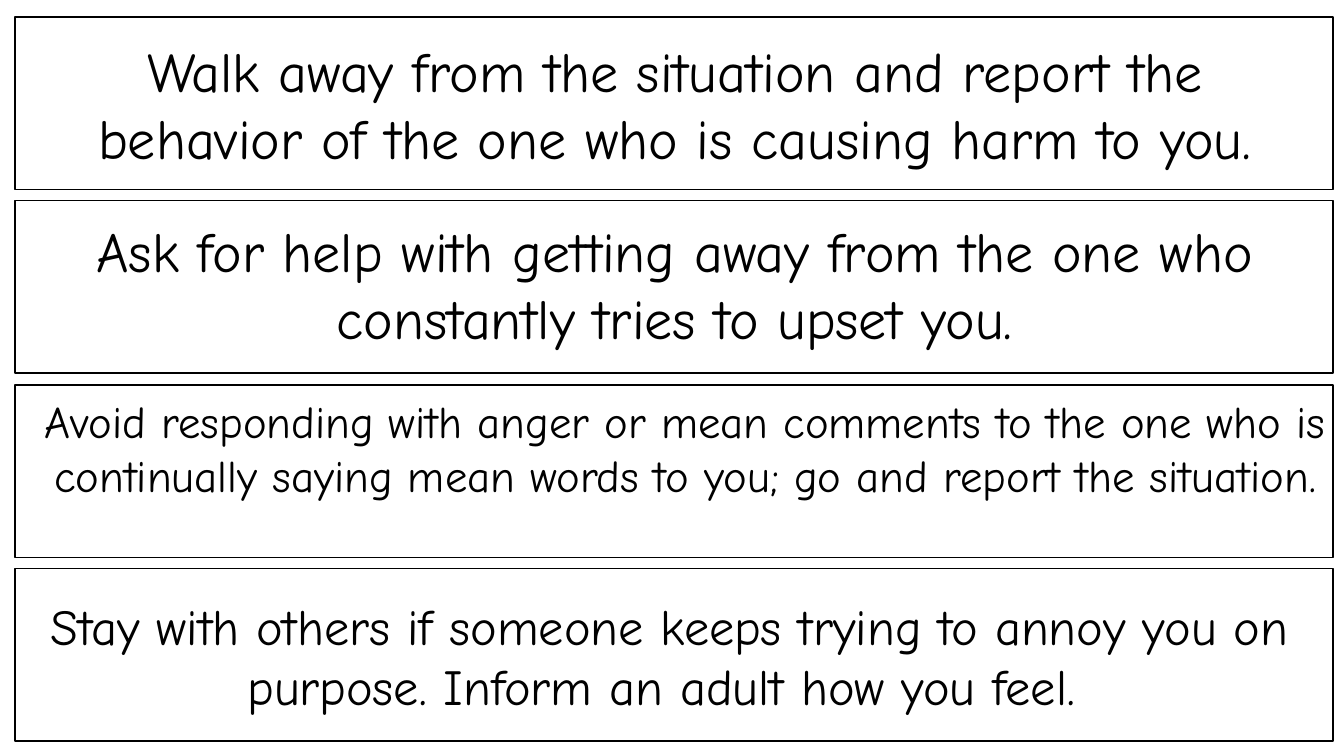
from pptx import Presentation
from pptx.dml.color import RGBColor
from pptx.enum.shapes import MSO_SHAPE
from pptx.enum.text import PP_ALIGN
from pptx.util import Inches, Pt

BLACK = RGBColor(0, 0, 0)
WHITE = RGBColor(255, 255, 255)
FONT = "Comic Neue"
TOP, STEP = 0.17, 1.824

ADVICE = [
    ("Walk away from the situation and report the behavior of the one "
     "who is causing harm to you.", 40, (0.35, 0.31, 12.68, 1.45)),
    ("Ask for help with getting away from the one who constantly tries "
     "to upset you.", 40, (0.35, 2.1, 12.68, 1.45)),
    ("Avoid responding with anger or mean comments to the one who is "
     "continually saying mean words to you; go and report the situation.",
     32, (0.28, 3.86, 13.04, 1.72)),
    ("Stay with others if someone keeps trying to annoy you on purpose. "
     "Inform an adult how you feel. ", 36, (0.3, 5.85, 12.68, 1.31)),
]


def add_frame(slide, top):
    """Draw one white strip with a thin black outline."""
    frame = slide.shapes.add_shape(
        MSO_SHAPE.RECTANGLE, Inches(0.15), Inches(top), Inches(13.07), Inches(1.71))
    frame.shadow.inherit = False
    frame.fill.solid()
    frame.fill.fore_color.rgb = WHITE
    frame.line.color.rgb = BLACK
    frame.line.width = Pt(1)


def add_text(slide, words, size, place):
    """Write one centred piece of advice."""
    box = slide.shapes.add_textbox(*map(Inches, place))
    box.text_frame.word_wrap = True
    para = box.text_frame.paragraphs[0]
    para.alignment = PP_ALIGN.CENTER
    run = para.add_run()
    run.text = words
    run.font.name = FONT
    run.font.size = Pt(size)
    run.font.color.rgb = BLACK


def main():
    """Build the slide of advice strips."""
    deck = Presentation()
    deck.slide_width = Inches(13.33)
    deck.slide_height = Inches(7.5)
    slide = deck.slides.add_slide(deck.slide_layouts[6])
    for row in range(len(ADVICE)):
        add_frame(slide, round(TOP + row * STEP, 2))
    for words, size, place in ADVICE:
        add_text(slide, words, size, place)
    deck.save("out.pptx")


if __name__ == "__main__":
    main()
